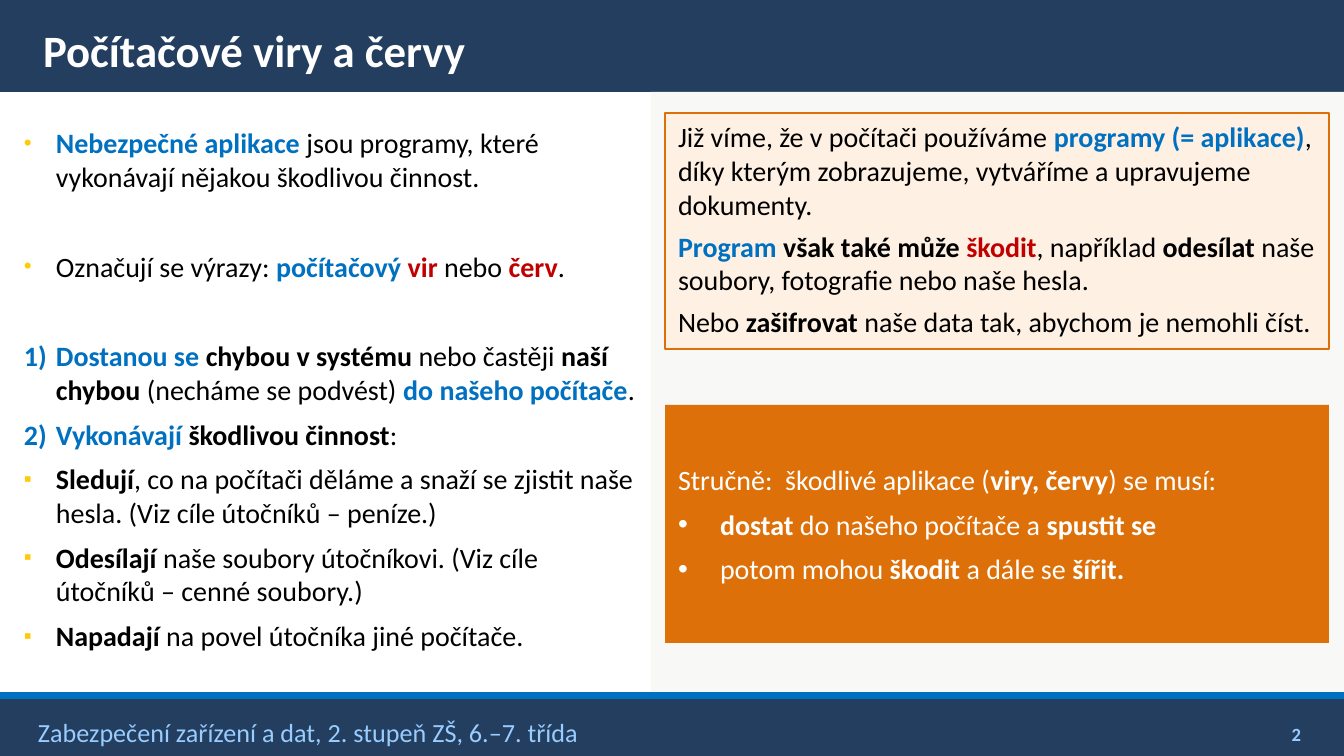
from lxml.etree import SubElement
from pptx import Presentation
from pptx.dml.color import RGBColor
from pptx.enum.shapes import MSO_CONNECTOR as Connector, MSO_SHAPE as Shape
from pptx.enum.text import MSO_ANCHOR as Anchor, PP_ALIGN as Align
from pptx.oxml.ns import qn
from pptx.util import Emu, Pt

WIDTH, HEIGHT = 1344, 756
EMU_PER_PX = 914400 * 10 / WIDTH

NAVY, BLUE, LIGHT_BLUE = "233E5F", "0070C0", "99CCFF"
ORANGE, CREAM, YELLOW = "DD7008", "FEF0E2", "FFCA08"
RED, BLACK, WHITE, PALE_GREY = "C00000", "000000", "FFFFFF", "F8F8F6"

# Run styles: colour (None takes the colour of the box) and bold
PLAIN, STRONG = (None, False), (None, True)
KEY, DANGER = (BLUE, True), (RED, True)

# Bullets: symbol (None for numbering), colour, size in percent, indent in px
DOT = ("•", YELLOW, 80, 32)
SQUARE = ("▪", YELLOW, 80, 32)
NUMBER = (None, BLUE, 100, 32)
WHITE_DOT = ("•", WHITE, 100, 42)

# Each paragraph: bullet, space before in points, runs
FACTS = [
    (DOT, 0, [("Nebezpečné aplikace", KEY),
              (" jsou programy, které vykonávají nějakou škodlivou činnost.", PLAIN)]),
    (DOT, 30, [("Označují se výrazy: ", PLAIN), ("počítačový ", KEY), ("vir ", DANGER),
               ("nebo ", PLAIN), ("červ", DANGER), (".", PLAIN)]),
    (NUMBER, 30, [("Dostanou se ", KEY), ("chybou v systému ", STRONG),
                  ("nebo častěji ", PLAIN), ("naší chybou", STRONG),
                  (" (necháme se podvést) ", PLAIN), ("do našeho počítače", KEY),
                  (".", PLAIN)]),
    (NUMBER, 6, [("Vykonávají ", KEY), ("škodlivou činnost", STRONG), (":", PLAIN)]),
    (SQUARE, 6, [("Sledují", STRONG),
                 (", co na počítači děláme a snaží se zjistit naše hesla. "
                  "(Viz cíle útočníků – peníze.)", PLAIN)]),
    (SQUARE, 6, [("Odesílají", STRONG),
                 (" naše soubory útočníkovi. (Viz cíle útočníků – cenné soubory.)", PLAIN)]),
    (SQUARE, 6, [("Napadají", STRONG), (" na povel útočníka jiné počítače.", PLAIN)]),
]
SUMMARY = [
    (None, 0, [("Stručně:  škodlivé aplikace (", PLAIN), ("viry, červy", STRONG),
               (") se musí:", PLAIN)]),
    (WHITE_DOT, 6, [("dostat", STRONG), (" do našeho počítače a ", PLAIN),
                    ("spustit se", STRONG)]),
    (WHITE_DOT, 6, [("potom mohou ", PLAIN), ("škodit ", STRONG),
                    ("a dále se ", PLAIN), ("šířit.", STRONG)]),
]
INTRODUCTION = [
    (None, 0, [("Již víme, že v počítači používáme ", PLAIN), ("programy (= aplikace)", KEY),
               (", díky kterým zobrazujeme, vytváříme a upravujeme dokumenty.", PLAIN)]),
    (None, 4.5, [("Program", KEY), (" však také může ", STRONG), ("škodit", DANGER),
                 (", například ", PLAIN), ("odesílat", STRONG),
                 (" naše soubory, fotografie nebo naše hesla.", PLAIN)]),
    (None, 4.5, [("Nebo ", PLAIN), ("zašifrovat", STRONG),
                 (" naše data tak, abychom je nemohli číst.", PLAIN)]),
]


def px(length):
    return Emu(round(length * EMU_PER_PX))


def rgb(colour):
    return RGBColor.from_string(colour)


def one_paragraph(text, style):
    return [(None, 0, [(text, style)])]


def add_bullet(paragraph, bullet):
    symbol, colour, percent, indent = bullet
    properties = paragraph._p.get_or_add_pPr()
    properties.set("marL", str(px(indent)))
    properties.set("indent", str(px(-indent)))
    bullet_colour = SubElement(properties, qn("a:buClr"))
    SubElement(bullet_colour, qn("a:srgbClr"), val=colour)
    SubElement(properties, qn("a:buSzPct"), val=str(percent * 1000))
    if symbol:
        SubElement(properties, qn("a:buFont"), typeface="Arial")
        SubElement(properties, qn("a:buChar"), char=symbol)
    else:
        SubElement(properties, qn("a:buFont"), typeface="Calibri")
        SubElement(properties, qn("a:buAutoNum"), type="arabicParenR")


def write(shape, paragraphs, size, colour, anchor=Anchor.TOP, align=Align.LEFT,
          insets=(13, 7, 13, 7)):
    frame = shape.text_frame
    frame.word_wrap = True
    frame.vertical_anchor = anchor
    (frame.margin_left, frame.margin_top,
     frame.margin_right, frame.margin_bottom) = map(px, insets)
    for index, (bullet, space, runs) in enumerate(paragraphs):
        paragraph = frame.add_paragraph() if index else frame.paragraphs[0]
        if bullet:
            add_bullet(paragraph, bullet)
        paragraph.alignment = align
        paragraph.space_before = Pt(space)
        for text, (run_colour, bold) in runs:
            run = paragraph.add_run()
            run.text = text
            run.font.name = "Calibri"
            run.font.size = Pt(size)
            run.font.bold = bold
            run.font.color.rgb = rgb(run_colour or colour)


def add_panel(slide, box, fill, outline=None):
    shape = slide.shapes.add_shape(Shape.RECTANGLE, *map(px, box))
    shape.shadow.inherit = False
    shape.fill.solid()
    shape.fill.fore_color.rgb = rgb(fill)
    if outline:
        shape.line.color.rgb = rgb(outline)
        shape.line.width = Pt(1)
    else:
        shape.line.fill.background()
    return shape


def add_text(slide, box, paragraphs, size, colour, **layout):
    text_box = slide.shapes.add_textbox(*map(px, box))
    write(text_box, paragraphs, size, colour, **layout)


def add_rule(slide, y, colour, width):
    rule = slide.shapes.add_connector(Connector.STRAIGHT, px(0), px(y), px(WIDTH), px(y))
    rule.line.color.rgb = rgb(colour)
    rule.line.width = Pt(width)
    SubElement(rule._element.spPr, qn("a:effectLst"))


def main():
    presentation = Presentation()
    presentation.slide_width, presentation.slide_height = px(WIDTH), px(HEIGHT)
    slide = presentation.slides.add_slide(presentation.slide_layouts[6])

    # Footer and title bars
    add_panel(slide, (0, 698, WIDTH, 58), NAVY)
    add_panel(slide, (0, 0, WIDTH, 92), NAVY)
    add_text(slide, (30, 708, 1158, 48),
             one_paragraph("Zabezpečení zařízení a dat, 2. stupeň ZŠ, 6.–7. třída", PLAIN),
             14, LIGHT_BLUE, anchor=Anchor.MIDDLE, insets=(8, 7, 4, 7))
    add_text(slide, (30, 8, 1310, 84), one_paragraph("Počítačové viry a červy", STRONG),
             24, WHITE, anchor=Anchor.MIDDLE, insets=(13, 7, 7, 7))
    add_text(slide, (1206, 714, 108, 31), one_paragraph("2", STRONG),
             10, LIGHT_BLUE, anchor=Anchor.BOTTOM, align=Align.RIGHT, insets=(13, 7, 13, 0))

    # Left column
    add_text(slide, (16, 113, 634, 583), FACTS, 15, BLACK, insets=(8, 13, 13, 7))

    # Right column
    add_panel(slide, (651, 92, 693, 605), PALE_GREY)
    add_rule(slide, 696, BLUE, 3.78)
    summary = add_panel(slide, (665, 405, 664, 238), ORANGE)
    write(summary, SUMMARY, 15, WHITE, anchor=Anchor.MIDDLE)
    introduction = add_panel(slide, (665, 113, 664, 236), CREAM, outline=ORANGE)
    write(introduction, INTRODUCTION, 15, BLACK)

    presentation.save("out.pptx")


if __name__ == "__main__":
    main()
